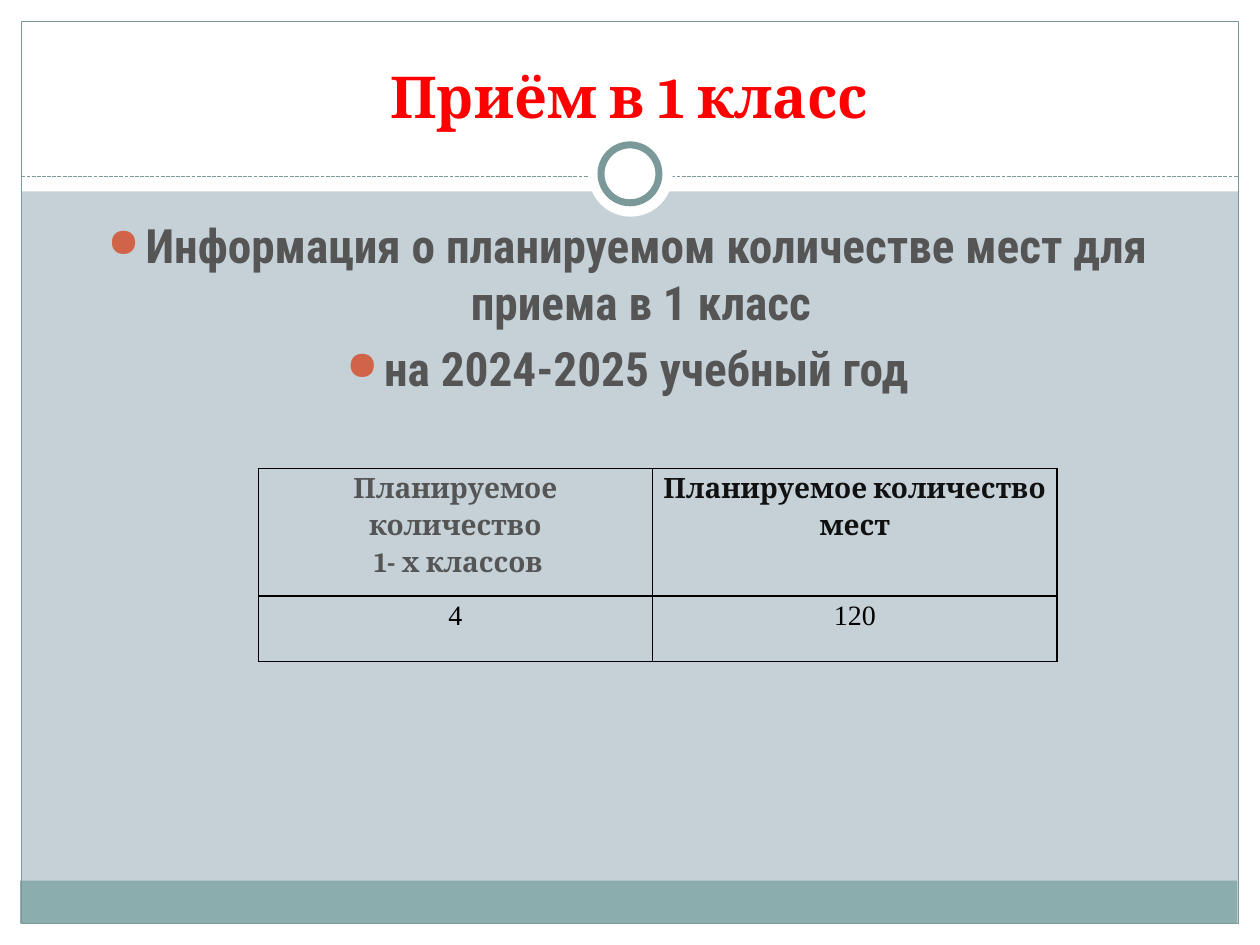
"""Build the slide on first-grade admission and the planned number of places."""
from dataclasses import dataclass

from lxml.etree import SubElement
from pptx import Presentation
from pptx.dml.color import RGBColor
from pptx.enum.dml import MSO_LINE_DASH_STYLE as Dash
from pptx.enum.shapes import MSO_CONNECTOR as Connector, MSO_SHAPE as Shape
from pptx.enum.text import MSO_ANCHOR as Anchor, PP_ALIGN as Align
from pptx.oxml import parse_xml
from pptx.oxml.ns import nsdecls, qn
from pptx.util import Inches, Pt


@dataclass(frozen=True)
class Theme:
    """Colours, fonts and type sizes of the slide."""
    ground: str = "C5D1D7"
    paper: str = "FFFFFF"
    band: str = "8CADAE"
    rule: str = "7C999A"
    heading: str = "FF0000"
    body: str = "555555"
    strong: str = "111111"
    ink: str = "000000"
    bullet: str = "D16349"
    serif: str = "Cambria"
    sans: str = "Roboto Condensed"
    figures: str = "Times New Roman"
    heading_size: float = 33
    body_size: float = 27
    table_size: float = 16


THEME = Theme()


def color(value):
    """Turn a hex string into a colour."""
    return RGBColor.from_string(value)


def add_panel(slide, kind, box, fill=None, line=None, weight=0.75):
    """Add a flat preset shape with optional fill and outline."""
    panel = slide.shapes.add_shape(kind, *map(Inches, box))
    panel.shadow.inherit = False
    if fill:
        panel.fill.solid()
        panel.fill.fore_color.rgb = color(fill)
    else:
        panel.fill.background()
    if line:
        panel.line.color.rgb = color(line)
        panel.line.width = Pt(weight)
    else:
        panel.line.fill.background()


def add_divider(slide, left, right, y):
    """Add the dashed rule under the heading."""
    divider = slide.shapes.add_connector(
        Connector.STRAIGHT, Inches(left), Inches(y), Inches(right), Inches(y))
    divider.line.color.rgb = color(THEME.rule)
    divider.line.width = Pt(0.75)
    divider.line.dash_style = Dash.SQUARE_DOT
    SubElement(divider._element.spPr, qn("a:effectLst"))


def add_run(paragraph, text, font, size, ink, bold=True):
    """Add one styled run to a centred paragraph."""
    paragraph.alignment = Align.CENTER
    run = paragraph.add_run()
    run.text = text
    run.font.name = font
    run.font.size = Pt(size)
    run.font.bold = bold
    run.font.color.rgb = color(ink)


def paragraphs(frame, count):
    """Return the given number of paragraphs in a text frame."""
    return [frame.paragraphs[0]] + [frame.add_paragraph() for _ in range(count - 1)]


def add_bullet(paragraph):
    """Give a paragraph a hanging round bullet."""
    props = paragraph._p.get_or_add_pPr()
    props.set("marL", str(Inches(0.3)))
    props.set("indent", str(-Inches(0.3)))
    SubElement(SubElement(props, qn("a:buClr")), qn("a:srgbClr"), val=THEME.bullet)
    SubElement(props, qn("a:buSzPct"), val="85000")
    SubElement(props, qn("a:buChar"), char="●")


def add_text(slide, box, lines, font, size, ink, anchor=Anchor.TOP, bulleted=False):
    """Add a wrapped text box, one paragraph per line."""
    frame = slide.shapes.add_textbox(*map(Inches, box)).text_frame
    frame.word_wrap = True
    frame.vertical_anchor = anchor
    for paragraph, line in zip(paragraphs(frame, len(lines)), lines):
        add_run(paragraph, line, font, size, ink)
        if bulleted:
            paragraph.space_before = Pt(size * 0.2)
            add_bullet(paragraph)


def add_borders(cell):
    """Draw a thin line on each side of a cell."""
    props = cell._tc.get_or_add_tcPr()
    for place, side in enumerate("LRTB"):
        props.insert(place, parse_xml(
            f'<a:ln{side} {nsdecls("a")} w="{Pt(1)}"><a:solidFill>'
            f'<a:srgbClr val="{THEME.ink}"/></a:solidFill></a:ln{side}>'))


def fill_cell(cell, lines, font, ink, bold):
    """Write centred lines into a clear, bordered cell."""
    cell.fill.background()
    cell.margin_left = cell.margin_right = Inches(0.07)
    cell.margin_top = cell.margin_bottom = 0
    for paragraph, line in zip(paragraphs(cell.text_frame, len(lines)), lines):
        paragraph.line_spacing = 1.15
        add_run(paragraph, line, font, THEME.table_size, ink, bold)
    add_borders(cell)


def add_places_table(slide):
    """Add the table of planned classes and places."""
    rows = [
        [(["Планируемое количество", " 1- х классов"], THEME.serif, THEME.body, True),
         (["Планируемое количество мест"], THEME.serif, THEME.strong, True)],
        [(["4"], THEME.figures, THEME.ink, False),
         (["120"], THEME.figures, THEME.ink, False)],
    ]
    places = slide.shapes.add_table(
        2, 2, Inches(2.05), Inches(3.72), Inches(6.34), Inches(1.53)).table
    places.first_row = places.horz_banding = False
    for column, width in zip(places.columns, (3.13, 3.21)):
        column.width = Inches(width)
    for row, height, contents in zip(places.rows, (1.01, 0.52), rows):
        row.height = Inches(height)
        for cell, content in zip(row.cells, contents):
            fill_cell(cell, *content)


def add_backdrop(slide):
    """Add the white margins, footer band, frame, rule and ring."""
    slide.background.fill.solid()
    slide.background.fill.fore_color.rgb = color(THEME.ground)
    margins = [(0, 7.33, 10, 0.17), (0, 0, 10, 1.52),
               (0, 0, 0.17, 7.5), (9.83, 0, 0.17, 7.5)]
    for margin in margins:
        add_panel(slide, Shape.RECTANGLE, margin, THEME.paper)
    add_panel(slide, Shape.RECTANGLE, (0.16, 6.99, 9.66, 0.34), THEME.band)
    add_panel(slide, Shape.RECTANGLE, (0.17, 0.17, 9.66, 7.16), line=THEME.rule)
    add_divider(slide, 0.17, 9.83, 1.4)
    add_panel(slide, Shape.OVAL, (4.67, 1.05, 0.67, 0.67), THEME.paper)
    add_panel(slide, Shape.OVAL, (4.77, 1.15, 0.46, 0.46), THEME.paper, THEME.rule, 4)


def main():
    """Assemble and save the slide."""
    deck = Presentation()
    deck.slide_width, deck.slide_height = Inches(10), Inches(7.5)
    slide = deck.slides.add_slide(deck.slide_layouts[6])
    add_backdrop(slide)
    add_text(slide, (0.33, 0.25, 9.33, 0.83), ["Приём в 1 класс"],
             THEME.serif, THEME.heading_size, THEME.heading, Anchor.BOTTOM)
    add_text(slide, (0.33, 1.67, 9.3, 5),
             ["Информация о планируемом количестве мест для приема в 1 класс ",
              "на 2024-2025 учебный год"],
             THEME.sans, THEME.body_size, THEME.body, bulleted=True)
    add_places_table(slide)
    deck.save("out.pptx")


if __name__ == "__main__":
    main()
